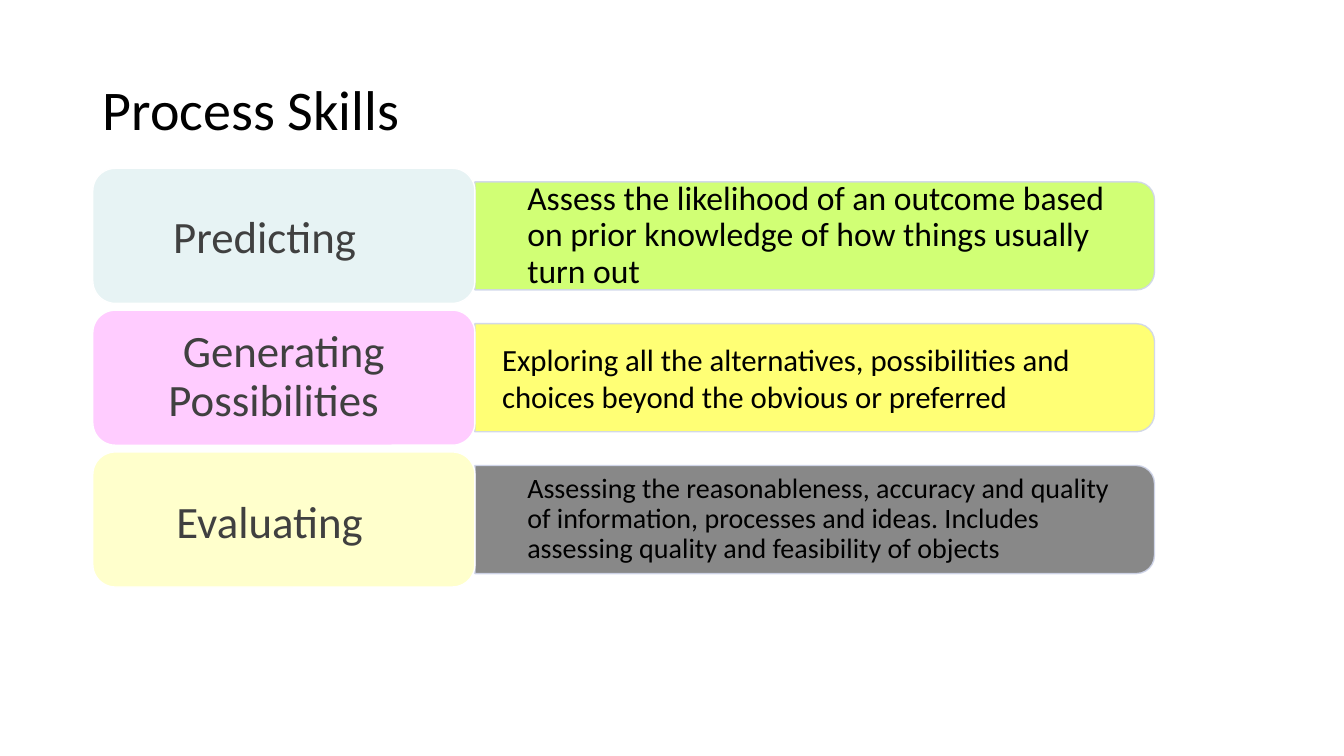
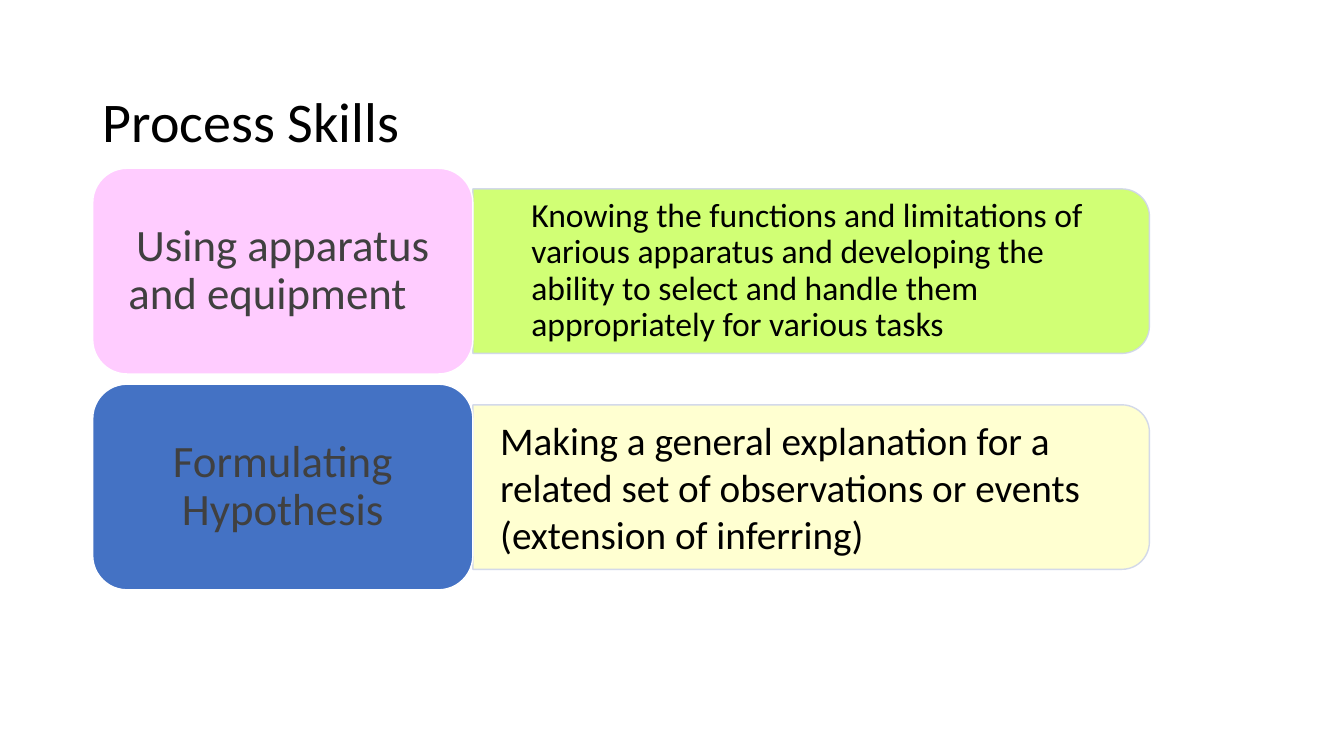
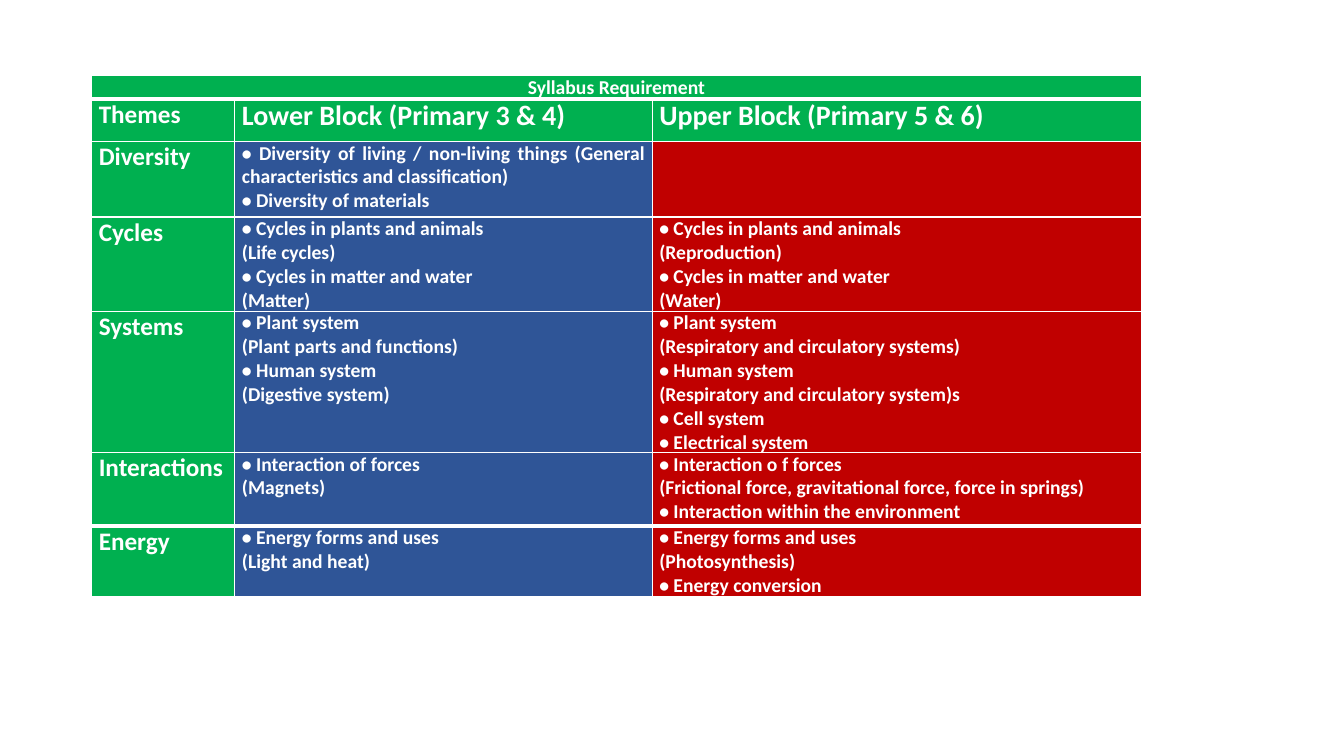
from lxml import etree
from pptx import Presentation
from pptx.dml.color import RGBColor
from pptx.enum.shapes import MSO_SHAPE
from pptx.enum.text import MSO_ANCHOR, PP_ALIGN
from pptx.oxml.ns import qn
from pptx.util import Inches, Pt

ROUNDED = MSO_SHAPE.ROUNDED_RECTANGLE
ROUNDED_END = MSO_SHAPE.ROUND_2_SAME_RECTANGLE
TOP, MIDDLE = MSO_ANCHOR.TOP, MSO_ANCHOR.MIDDLE
LEFT, CENTER, JUSTIFY = PP_ALIGN.LEFT, PP_ALIGN.CENTER, PP_ALIGN.JUSTIFY

FONT = "Calibri"
BLACK = RGBColor(0x00, 0x00, 0x00)
WHITE = RGBColor(0xFF, 0xFF, 0xFF)
DARK_GRAY = RGBColor(0x40, 0x40, 0x40)
MID_GRAY = RGBColor(0x7C, 0x7C, 0x7C)
PALE_LINE = RGBColor(0xCF, 0xD5, 0xEA)
PALE_TEAL = RGBColor(0xE7, 0xF3, 0xF4)
PINK = RGBColor(0xFF, 0xCC, 0xFF)
CREAM = RGBColor(0xFF, 0xFF, 0xCC)
LIME = RGBColor(0xCC, 0xFF, 0x66)
YELLOW = RGBColor(0xFF, 0xFF, 0x66)
BLUE = RGBColor(0x44, 0x72, 0xC4)
GREEN = RGBColor(0x00, 0xB0, 0x50)
NAVY = RGBColor(0x2F, 0x55, 0x97)
RED = RGBColor(0xC0, 0x00, 0x00)

# Skill rows: left and top of the stack, proportions relative to the label
STACK_LEFT, STACK_TOP = 0.92, 1.67
ROW_PITCH, BAR_SHARE = 1.05, 0.8

# Each skill: label, label fill, label format, description, bar fill, description format
SKILLS_1 = [
    ("Predicting", PALE_TEAL, {"shift": 0.38, "drop": 0.06},
     "Assess the likelihood of an outcome based on prior knowledge of how "
     "things usually turn out",
     LIME, {"size": 24, "margin": 0.25, "spacing": 0.9}),
    ("Generating Possibilities", PINK, {"shift": 0.2, "indent": 0.2},
     "Exploring all the alternatives, possibilities and choices beyond the "
     "obvious or preferred",
     YELLOW, {"size": 22}),
    ("Evaluating", CREAM, {"shift": 0.28, "drop": 0.09},
     "Assessing the reasonableness, accuracy and quality of information, "
     "processes and ideas. Includes assessing quality and feasibility of objects",
     MID_GRAY, {"size": 20, "margin": 0.25, "spacing": 0.9}),
]
SKILLS_2 = [
    ("Using apparatus and equipment", PINK, {"shift": 0.3, "indent": 0.3},
     "Knowing the functions and limitations of various apparatus and developing "
     "the ability to select and handle them appropriately for various tasks",
     LIME, {"size": 24, "margin": 0.31, "spacing": 0.9}),
    ("Formulating Hypothesis", BLUE, {},
     "Making a general explanation for a related set of observations or events "
     "(extension of inferring)",
     CREAM, {"size": 28}),
]

SYLLABUS_HEADING = "Syllabus Requirement"
SYLLABUS = [
    ("Themes", "Lower Block (Primary 3 & 4)", "Upper Block (Primary 5 & 6)"),
    ("Diversity",
     "• Diversity of living / non-living things (General characteristics and "
     "classification)\n• Diversity of materials",
     ""),
    ("Cycles",
     "• Cycles in plants and animals\n(Life cycles)\n"
     "• Cycles in matter and water\n(Matter)",
     "• Cycles in plants and animals\n(Reproduction)\n"
     "• Cycles in matter and water\n(Water)"),
    ("Systems",
     "• Plant system\n(Plant parts and functions)\n"
     "• Human system\n(Digestive system)",
     "• Plant system\n(Respiratory and circulatory systems)\n"
     "• Human system\n(Respiratory and circulatory system)s\n"
     "• Cell system\n• Electrical system"),
    ("Interactions",
     "• Interaction of forces\n(Magnets)",
     "• Interaction o f forces\n"
     "(Frictional force, gravitational force, force in springs)\n"
     "• Interaction within the environment"),
    ("Energy",
     "• Energy forms and uses\n(Light and heat)",
     "• Energy forms and uses\n(Photosynthesis)\n• Energy conversion"),
]
COLUMN_WIDTHS = [1.42, 4.14, 4.85]
ROW_HEIGHTS = [0.22, 0.42, 0.75, 0.87, 1.39, 0.73, 0.65]


def write(frame, text, *, size, color=BLACK, bold=False, align=LEFT, spacing=1.0,
          margin=0, indent=0):
    """Fill a text frame, one paragraph per line of text."""
    for number, line in enumerate(text.split("\n")):
        paragraph = frame.add_paragraph() if number else frame.paragraphs[0]
        paragraph.alignment = align
        paragraph.line_spacing = spacing
        properties = paragraph._p.get_or_add_pPr()
        properties.set("marL", str(Inches(margin)))
        properties.set("indent", str(Inches(indent)))
        font = paragraph.font
        if line:
            font = paragraph.add_run().font
            paragraph.runs[0].text = line
        font.name, font.size, font.bold = FONT, Pt(size), bold
        font.color.rgb = color


def set_frame(frame, left, top, right, bottom):
    frame.word_wrap = True
    frame.vertical_anchor = MIDDLE
    frame.margin_left, frame.margin_right = Inches(left), Inches(right)
    frame.margin_top, frame.margin_bottom = Inches(top), Inches(bottom)


def add_text(slide, left, top, width, height, text, insets, **style):
    box = slide.shapes.add_textbox(
        Inches(left), Inches(top), Inches(width), Inches(height))
    set_frame(box.text_frame, *insets)
    write(box.text_frame, text, **style)


def add_block(slide, preset, left, top, width, height, fill, line):
    block = slide.shapes.add_shape(
        preset, Inches(left), Inches(top), Inches(width), Inches(height))
    block.shadow.inherit = False
    block.fill.solid()
    block.fill.fore_color.rgb = fill
    block.line.color.rgb = line
    block.line.width = Pt(1)
    return block


def add_title(slide, top, height):
    add_text(slide, 0.92, top, 6.67, height, "Process Skills",
             (0.1, 0.05, 0.1, 0.05), size=40, spacing=0.9)


def add_label(slide, top, width, height, text, fill, shift=0, drop=0, indent=0):
    label = add_block(slide, ROUNDED, STACK_LEFT, top, width, height, fill, WHITE)
    side = 0 if shift else 0.13
    set_frame(label.text_frame, side, 0.07 + drop, side + shift, 0.07)
    write(label.text_frame, text, size=32, color=DARK_GRAY, align=CENTER,
          spacing=0.9, indent=indent)


def add_description(slide, left, middle, width, height, text, fill, **style):
    # The bar is turned so that its two rounded corners face right
    bar = add_block(slide, ROUNDED_END, left + (width - height) / 2,
                    middle - width / 2, height, width, fill, PALE_LINE)
    bar.rotation = 90
    for color in bar._element.spPr.iter(qn("a:srgbClr")):
        etree.SubElement(color, qn("a:alpha"), val="90000")
    add_text(slide, left, middle - height / 2, width - 0.06, height, text,
             (0.27, 0, 0.27, 0), **style)


def add_skills(slide, skills, label_width, label_height, bar_width):
    for row, skill in enumerate(skills):
        label, label_fill, label_format, description, bar_fill, style = skill
        top = STACK_TOP + row * label_height * ROW_PITCH
        add_description(slide, STACK_LEFT + label_width, top + label_height / 2,
                        bar_width, label_height * BAR_SHARE, description, bar_fill,
                        **style)
        add_label(slide, top, label_width, label_height, label, label_fill,
                  **label_format)


def set_borders(cell, top=1, bottom=1):
    properties = cell._tc.get_or_add_tcPr()
    for side, width in (("L", 1), ("R", 1), ("T", top), ("B", bottom)):
        border = etree.SubElement(properties, qn("a:ln" + side), w=str(Pt(width)))
        fill = etree.SubElement(border, qn("a:solidFill"))
        etree.SubElement(fill, qn("a:srgbClr"), val=str(WHITE))


def fill_cell(cell, text, fill, size, align=JUSTIFY, **borders):
    set_borders(cell, **borders)
    cell.fill.solid()
    cell.fill.fore_color.rgb = fill
    cell.vertical_anchor = TOP
    cell.margin_left = cell.margin_right = Inches(0.07)
    cell.margin_top = cell.margin_bottom = 0
    write(cell.text_frame, text, size=size, color=WHITE, bold=True, align=align)


def add_syllabus(slide):
    table = slide.shapes.add_table(
        len(ROW_HEIGHTS), len(COLUMN_WIDTHS), Inches(0.91), Inches(0.75),
        Inches(sum(COLUMN_WIDTHS)), Inches(sum(ROW_HEIGHTS))).table
    for column, width in zip(table.columns, COLUMN_WIDTHS):
        column.width = Inches(width)
    for row, height in zip(table.rows, ROW_HEIGHTS):
        row.height = Inches(height)

    # Heading across all columns
    table.cell(0, 0).merge(table.cell(0, 2))
    for column in range(3):
        fill_cell(table.cell(0, column), "" if column else SYLLABUS_HEADING,
                  GREEN, 14, CENTER, bottom=3)

    # Block names, then one row per theme
    for row, texts in enumerate(SYLLABUS, start=1):
        top = 3 if row in (1, len(SYLLABUS)) else 1
        bottom = 3 if row == len(SYLLABUS) - 1 else 1
        fills = (GREEN,) * 3 if row == 1 else (GREEN, NAVY, RED)
        sizes = (18, 20, 20) if row == 1 else (18, 14, 14)
        for column, (text, fill, size) in enumerate(zip(texts, fills, sizes)):
            fill_cell(table.cell(row, column), text, fill, size,
                      top=top, bottom=bottom)


def main():
    deck = Presentation()
    deck.slide_width, deck.slide_height = Inches(13.33), Inches(7.5)
    blank = deck.slide_layouts[6]

    # Thinking skills
    slide = deck.slides.add_slide(blank)
    add_title(slide, 0.69, 0.84)
    add_skills(slide, SKILLS_1, 3.79, 1.34, 6.74)

    # Practical skills
    slide = deck.slides.add_slide(blank)
    add_title(slide, 0.77, 0.93)
    add_skills(slide, SKILLS_2, 3.77, 2.04, 6.71)

    # Syllabus table
    add_syllabus(deck.slides.add_slide(blank))

    deck.save("out.pptx")


if __name__ == "__main__":
    main()
